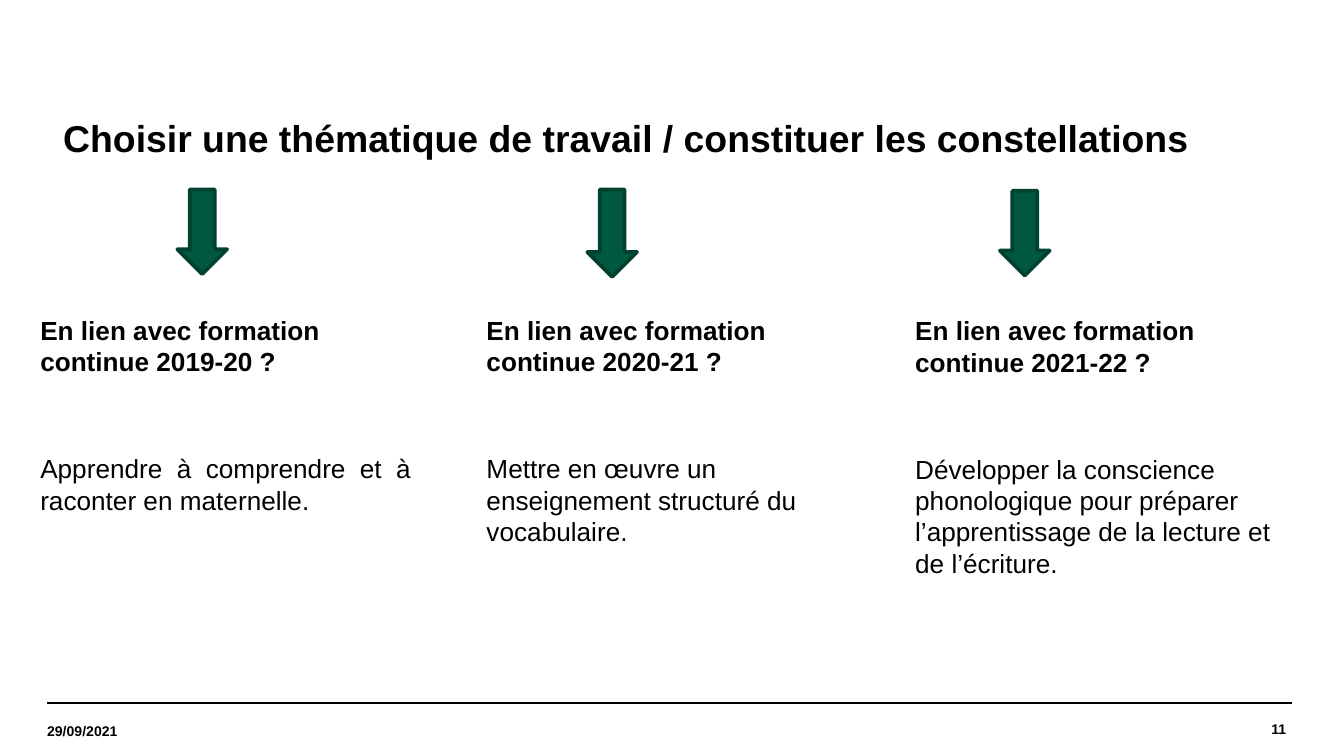
from dataclasses import dataclass

from lxml import etree
from pptx import Presentation
from pptx import util as u
from pptx.dml.color import RGBColor
from pptx.enum import shapes, text
from pptx.oxml.ns import qn

COLORS = {"text": "000000", "arrow": "005841", "arrow_edge": "004130"}
FONT = "Arial"
PAGE_WIDTH = u.Inches(10)
PAGE_HEIGHT = PAGE_WIDTH * 9 // 16
COLUMN_TOP, COLUMN_WIDTH = 2.34, 2.76
ARROW_WIDTH = 0.37


@dataclass
class Column:
    left: float
    height: float
    heading: str
    theme: str
    arrow_left: float
    arrow_top: float = 1.41
    arrow_height: float = 0.63
    theme_align: text.PP_ALIGN = text.PP_ALIGN.LEFT


COLUMNS = [
    Column(0.3, 2.13, "En lien avec formation continue 2019-20 ?",
           "Apprendre à comprendre et à raconter en maternelle.",
           1.32, theme_align=text.PP_ALIGN.JUSTIFY),
    Column(3.62, 2.2, "En lien avec formation continue 2020-21 ?",
           "Mettre en œuvre un enseignement structuré du vocabulaire.",
           4.37, arrow_height=0.65),
    Column(6.81, 2.28, "En lien avec formation continue 2021-22 ?",
           "Développer la conscience phonologique pour préparer "
           "l’apprentissage de la lecture et de l’écriture.",
           7.44, arrow_top=1.42),
]


def color(name: str) -> RGBColor:
    return RGBColor.from_string(COLORS[name])


def add_box(page, left: float, top: float, width: float, height: float,
            anchor=text.MSO_ANCHOR.MIDDLE):
    """Add a wrapping text box without margins and return its text frame."""
    box = page.shapes.add_textbox(
        u.Inches(left), u.Inches(top), u.Inches(width), u.Inches(height))
    frame = box.text_frame
    frame.word_wrap = True
    frame.vertical_anchor = anchor
    frame.margin_left = frame.margin_right = 0
    frame.margin_top = frame.margin_bottom = 0
    return frame


def write(para, words: str, size: float, bold: bool = True,
          align=text.PP_ALIGN.LEFT) -> None:
    para.text = words
    para.alignment = align
    para.font.name = FONT
    para.font.size = u.Pt(size)
    para.font.bold = bold
    para.font.color.rgb = color("text")


def add_title(page, words: str) -> None:
    frame = add_box(page, 0.35, 0.75, 9.21, 0.59)
    frame.margin_left = u.Inches(0.12)
    frame.margin_right = u.Inches(0.1)
    para = frame.paragraphs[0]
    write(para, words, 20)
    para.line_spacing = 0.9


def add_column(page, column: Column) -> None:
    frame = add_box(page, column.left, COLUMN_TOP, COLUMN_WIDTH, column.height,
                    text.MSO_ANCHOR.TOP)
    heading, theme = frame.paragraphs[0], frame.add_paragraph()
    write(heading, column.heading, 14)
    write(theme, column.theme, 14, False, column.theme_align)
    theme.space_before = u.Pt(32.5)
    for para in (heading, theme):
        para.space_after = u.Pt(8)


def add_arrow(page, column: Column) -> None:
    arrow = page.shapes.add_shape(
        shapes.MSO_SHAPE.DOWN_ARROW, u.Inches(column.arrow_left),
        u.Inches(column.arrow_top), u.Inches(ARROW_WIDTH),
        u.Inches(column.arrow_height))
    arrow.shadow.inherit = False
    arrow.fill.solid()
    arrow.fill.fore_color.rgb = color("arrow")
    arrow.line.color.rgb = color("arrow_edge")
    arrow.line.width = u.Pt(2)


def add_rule(page, left: float, right: float, top: float) -> None:
    rule = page.shapes.add_connector(
        shapes.MSO_CONNECTOR.STRAIGHT, u.Inches(left), u.Inches(top),
        u.Inches(right), u.Inches(top))
    rule.line.color.rgb = color("text")
    rule.line.width = u.Pt(0.8)
    etree.SubElement(rule._element.spPr, qn("a:effectLst"))


def add_footer(page, date: str, number: str) -> None:
    for left in (0.35, 0.39):
        add_rule(page, left, left + 9.22, 5.23)
    number_frame = add_box(page, 8.09, 5.23, 1.48, 0.39)
    write(number_frame.paragraphs[0], number, 7.5, align=text.PP_ALIGN.RIGHT)
    date_frame = add_box(page, 0.35, 5.25, 1.32, 0.38)
    write(date_frame.paragraphs[0], date, 7.5)


def main() -> None:
    deck = Presentation()
    deck.slide_width, deck.slide_height = PAGE_WIDTH, PAGE_HEIGHT
    page = deck.slides.add_slide(deck.slide_layouts[6])
    add_footer(page, "29/09/2021", "11")
    add_title(page, "Choisir une thématique de travail / "
                    "constituer les constellations")
    for column in COLUMNS:
        add_column(page, column)
        add_arrow(page, column)
    deck.save("out.pptx")


if __name__ == "__main__":
    main()
